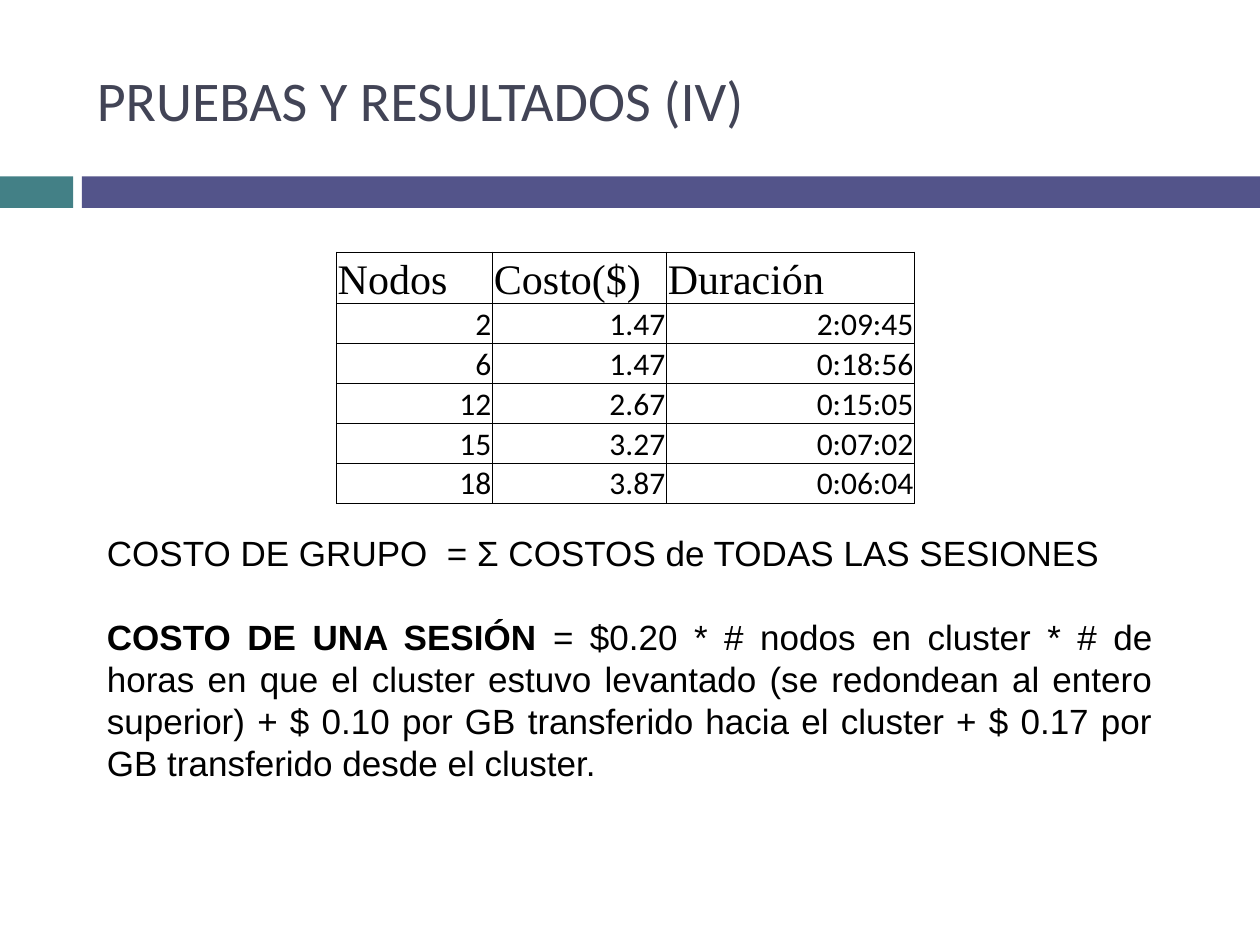
import pptx
import pptx.util
import pptx.dml.color
import pptx.enum.shapes
import pptx.enum.text
import lxml.etree

Pt = pptx.util.Pt
Align = pptx.enum.text.PP_ALIGN
Anchor = pptx.enum.text.MSO_ANCHOR
BLACK = "000000"


def color(code):
    return pptx.dml.color.RGBColor.from_string(code)


class Deck:
    """Style and current slide, laid on a grid of 100 columns by 75 rows."""

    def __init__(self):
        self.file = pptx.Presentation()
        self.file.slide_width = pptx.util.Inches(10)
        self.file.slide_height = pptx.util.Inches(7.5)
        self.unit = self.file.slide_width / 100
        self.slide = self.file.slides.add_slide(self.file.slide_layouts[6])

    def span(self, *cells):
        return [round(cell * self.unit) for cell in cells]

    def font(self, para, name, size, code=BLACK):
        para.font.name = name
        para.font.size = Pt(size)
        para.font.color.rgb = color(code)

    def bar(self, box, code):
        kind = pptx.enum.shapes.MSO_SHAPE.RECTANGLE
        shape = self.slide.shapes.add_shape(kind, *self.span(*box))
        shape.shadow.inherit = False
        shape.fill.solid()
        shape.fill.fore_color.rgb = color(code)
        shape.line.fill.background()

    def text(self, box, paras, name, size, code=BLACK, align=Align.LEFT,
             anchor=Anchor.TOP, lead=None, gap=0):
        frame = self.slide.shapes.add_textbox(*self.span(*box)).text_frame
        frame.word_wrap = True
        frame.vertical_anchor = anchor
        for i, runs in enumerate(paras):
            para = frame.add_paragraph() if i else frame.paragraphs[0]
            para.alignment = align
            if lead:
                para.line_spacing = Pt(lead)
            if i:
                para.space_before = Pt(gap)
            self.font(para, name, size, code)
            for words, bold in runs:
                run = para.add_run()
                run.text = words
                run.font.bold = bold

    def edge(self, cell):
        props = cell._tc.get_or_add_tcPr()
        space = "{http://schemas.openxmlformats.org/drawingml/2006/main}"
        for side in "LRTB":
            line = lxml.etree.SubElement(props, f"{space}ln{side}", w=str(Pt(0.5)))
            fill = lxml.etree.SubElement(line, space + "solidFill")
            lxml.etree.SubElement(fill, space + "srgbClr", val=BLACK)

    def table(self, left, top, wide, high, data):
        box = self.span(left, top, sum(wide), sum(high))
        grid = self.slide.shapes.add_table(len(high), len(wide), *box).table
        grid.first_row = grid.horz_banding = False
        for col, size in zip(grid.columns, self.span(*wide)):
            col.width = size
        for row, size in zip(grid.rows, self.span(*high)):
            row.height = size
        for r, line in enumerate(data):
            for c, words in enumerate(line):
                cell = grid.cell(r, c)
                self.edge(cell)
                cell.fill.background()
                cell.vertical_anchor = Anchor.BOTTOM
                cell.margin_left = cell.margin_right = cell.margin_top = Pt(0.75)
                cell.margin_bottom = 0
                cell.text = words
                para = cell.text_frame.paragraphs[0]
                para.alignment = Align.RIGHT if r else Align.LEFT
                self.font(para, *(("Calibri", 18) if r else ("Times New Roman", 24)))


def main():
    deck = Deck()
    deck.bar((0, 14, 5.8, 2.5), "438086")
    deck.bar((6.5, 14, 93.5, 2.5), "53548A")
    deck.text((6.7, 2.5, 89.2, 10.8), [[("PRUEBAS Y RESULTADOS (IV)", False)]],
              "Calibri", 32, "424456", anchor=Anchor.MIDDLE)
    deck.table(26.7, 20, (12.4, 13.8, 19.7), [3.7] + [3.17] * 5, [
        ("Nodos", "Costo($)", "Duración"),
        ("2", "1.47", "2:09:45"),
        ("6", "1.47", "0:18:56"),
        ("12", "2.67", "0:15:05"),
        ("15", "3.27", "0:07:02"),
        ("18", "3.87", "0:06:04"),
    ])
    deck.text((7.5, 41.7, 85, 24.2), [
        [("COSTO DE GRUPO  = Σ COSTOS de TODAS LAS SESIONES", False)],
        [("COSTO DE UNA SESIÓN ", True),
         ("= $0.20 * # nodos en cluster * # de horas en que el cluster estuvo "
          "levantado (se redondean al entero superior) + $ 0.10 por GB "
          "transferido hacia el cluster + $ 0.17 por GB transferido desde el "
          "cluster.", False)],
    ], "Arial", 20, align=Align.JUSTIFY, lead=24, gap=24)
    deck.file.save("out.pptx")


if __name__ == "__main__":
    main()
